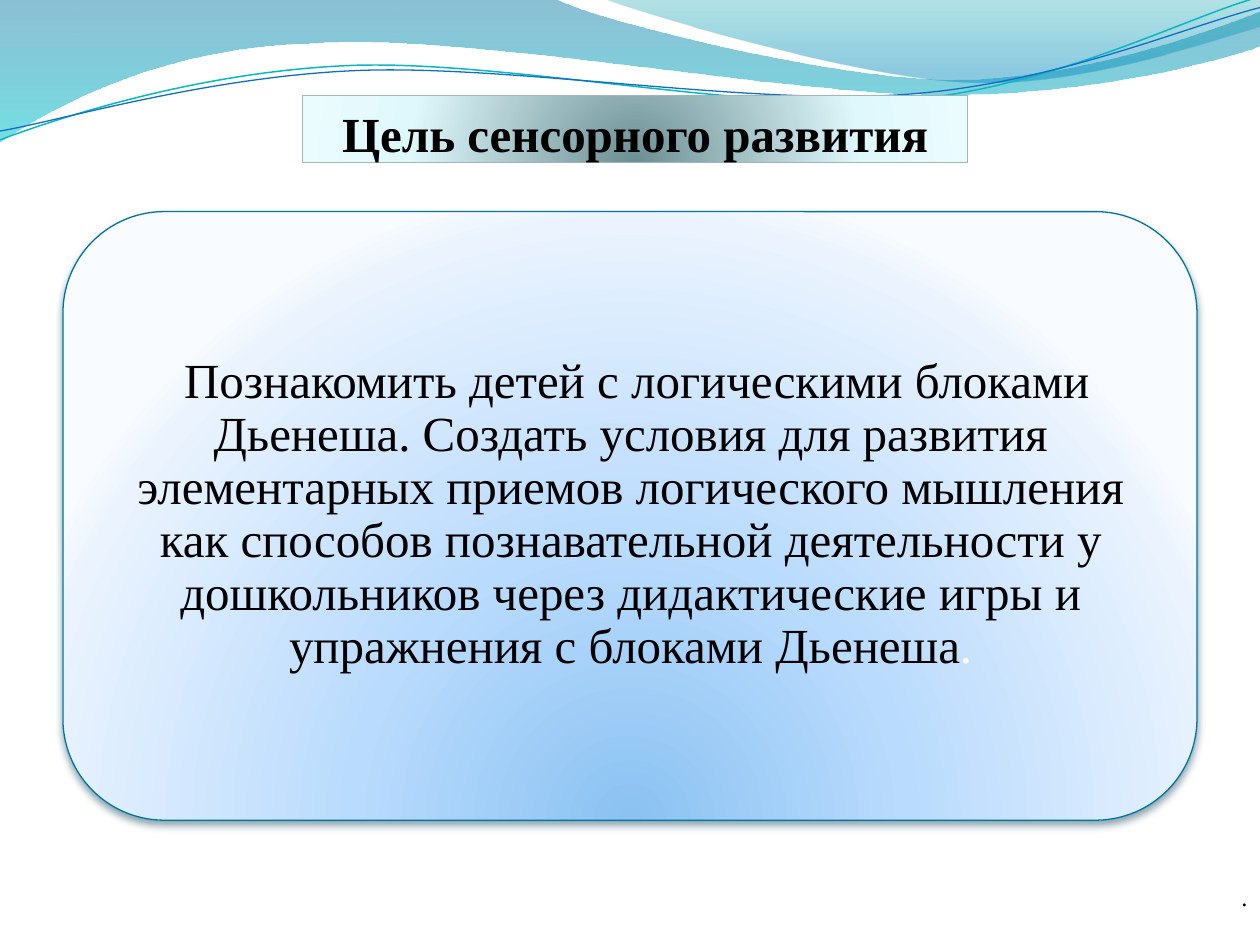
import math

from lxml import etree
from pptx import Presentation
from pptx import util as u
from pptx.dml.color import RGBColor
from pptx.enum import shapes, text
from pptx.oxml import ns

FONT = "Times New Roman"
COLORS = {
    "ink": "000000", "white": "FFFFFF",
    "wave_blue": "0074A1", "wave_cyan": "00C6CF",
    "crest_teal": "00A1A9", "crest_blue": "008BBF",
    "line_teal": "0AB8BF", "line_blue": "0F6FC6",
    "title_dark": "6C8F94", "title_mid": "DFF8FC", "title_light": "EBFCFF",
    "title_line": "A2B5B9",
    "panel_core": "8BC2F1", "panel_mid": "B9DBFD",
    "panel_pale": "EAF3FE", "panel_edge": "F8FBFF",
    "panel_line": "0074A1", "panel_shadow": "00374C",
}
TITLE_STOPS = [(0, "title_dark", 100), (68, "title_mid", 100), (100, "title_light", 100)]
PANEL_STOPS = [(0, "panel_core", 100), (43, "panel_mid", 100),
               (93, "panel_pale", 100), (100, "panel_edge", 100)]
WAVE_STOPS = [(0, "wave_blue", 45), (100, "wave_cyan", 55)]
CREST_STOPS = [(0, "crest_teal", 30), (80, "crest_blue", 45)]

WAVE = [(0, 0), (4.4, -0.01), (4.76, 0.17, 6.64, 0.63, 7.58, 0.63),
        (8.53, 0.63, 9.58, 0.26, 10, 0.09), (10.01, 0.36),
        (9.83, 0.44, 8.7, 0.76, 7.46, 0.75), (6.22, 0.75, 3.82, 0.28, 2.57, 0.34),
        (1.29, 0.36, 0.46, 0.83, -0.01, 1.13), (0, 0)]
CREST = [(4.79, -0.01), (5.09, 0.11, 6.82, 0.62, 7.69, 0.65),
         (8.56, 0.69, 9.61, 0.32, 10, 0.21), (10, 0), (4.79, -0.01)]
TEAL_LINE = [(0, 1.11), (0.48, 0.93, 1.58, 0.57, 2.77, 0.52),
             (3.95, 0.47, 5.93, 0.89, 7.13, 0.8), (8.33, 0.71, 9.38, 0.15, 9.98, -0.02)]
BLUE_LINE = [(0, 1.04), (0.47, 0.96, 1.64, 0.61, 2.83, 0.56),
             (4.03, 0.51, 5.97, 0.84, 7.17, 0.75), (8.36, 0.67, 9.41, 0.21, 10, 0.06)]
RIPPLE_TILT = -2.7

TITLE = "Цель сенсорного развития"
GOAL = (" Познакомить детей с логическими блоками Дьенеша. Создать условия для развития "
        "элементарных приемов логического мышления как способов познавательной "
        "деятельности у дошкольников через дидактические игры и упражнения с блоками Дьенеша")


def add_node(parent, tag, **attributes):
    return etree.SubElement(parent, ns.qn(tag), {k: str(v) for k, v in attributes.items()})


def add_color(parent, color, alpha):
    node = add_node(parent, "a:srgbClr", val=COLORS[color])
    if alpha < 100:
        add_node(node, "a:alpha", val=alpha * 1000)


def fill_gradient(shape, stops, radial=False):
    shape.fill.gradient()
    gradient = shape.element.spPr.find(ns.qn("a:gradFill"))
    for child in list(gradient):
        gradient.remove(child)
    stop_list = add_node(gradient, "a:gsLst")
    for position, color, alpha in stops:
        add_color(add_node(stop_list, "a:gs", pos=position * 1000), color, alpha)
    if radial:
        focus = add_node(gradient, "a:path", path="circle")
        add_node(focus, "a:fillToRect", l=50000, t=130000, r=50000, b=-30000)
    else:
        add_node(gradient, "a:lin", ang=5400000, scaled=1)


def set_line(shape, color, width):
    shape.line.color.rgb = RGBColor.from_string(COLORS[color])
    shape.line.width = u.Pt(width)


def add_shadow(shape, color):
    effects = shape.element.spPr.find(ns.qn("a:effectLst"))
    shadow = add_node(effects, "a:outerShdw", blurRad=u.Pt(4.5), dist=u.Pt(3),
                      dir=5400000, rotWithShape=0)
    add_color(shadow, color, 48)


def turn(point, center, degrees):
    cos, sin = math.cos(math.radians(degrees)), math.sin(math.radians(degrees))
    dx, dy = point[0] - center[0], point[1] - center[1]
    return center[0] + dx * cos - dy * sin, center[1] + dx * sin + dy * cos


def add_outline(slide, left, top, outline, close, tilt=0, center=(0, 0)):
    points = [turn(step[i:i + 2], center, -tilt)
              for step in outline for i in range(0, len(step), 2)]
    points = [(left + u.Inches(x), top + u.Inches(y)) for x, y in points]
    builder = slide.shapes.build_freeform(*points[0])
    builder.add_line_segments(points[1:], close=close)
    shape = builder.convert_to_shape()
    segments = iter(list(shape.element.iter(ns.qn("a:lnTo"))))
    for step in outline[1:]:
        segment = next(segments)
        if len(step) == 6:
            curve = etree.Element(ns.qn("a:cubicBezTo"))
            segment.addprevious(curve)
            for part in (segment, next(segments), next(segments)):
                curve.append(part[0])
                part.getparent().remove(part)
    shape.rotation = tilt
    shape.shadow.inherit = False
    return shape


def add_waves(slide, left, top):
    for outline, stops in ((WAVE, WAVE_STOPS), (CREST, CREST_STOPS)):
        wave = add_outline(slide, left, top, outline, True)
        fill_gradient(wave, stops)
        wave.line.fill.background()
    for outline, color, width, center in ((TEAL_LINE, "line_teal", 0.85, (4.99, 0.575)),
                                          (BLUE_LINE, "line_blue", 0.75, (4.995, 0.59))):
        ripple = add_outline(slide, left, top, outline, False, RIPPLE_TILT, center)
        ripple.fill.background()
        set_line(ripple, color, width)


def add_card(slide, kind, box, stops, line):
    card = slide.shapes.add_shape(kind, *box)
    card.shadow.inherit = False
    fill_gradient(card, stops, radial=True)
    set_line(card, line, 0.75)
    return card


def write(frame, wording, size, align, anchor, margins, bold=False):
    frame.word_wrap = True
    frame.vertical_anchor = anchor
    (frame.margin_left, frame.margin_top,
     frame.margin_right, frame.margin_bottom) = map(u.Inches, margins)
    paragraph = frame.paragraphs[0]
    paragraph.alignment = align
    for content, color in wording:
        run = paragraph.add_run()
        run.text = content
        run.font.name = FONT
        run.font.size = u.Pt(size)
        run.font.bold = bold
        run.font.color.rgb = RGBColor.from_string(COLORS[color])
    return paragraph


def add_title(slide, left, top, width, height):
    title = add_card(slide, shapes.MSO_SHAPE.RECTANGLE, (left, top, width, height),
                     TITLE_STOPS, "title_line")
    write(title.text_frame, [(TITLE, "ink")], 28, text.PP_ALIGN.CENTER,
          text.MSO_ANCHOR.BOTTOM, (0, 0.05, 0, 0), bold=True)


def add_goal(slide, left, top, width, height):
    panel = add_card(slide, shapes.MSO_SHAPE.ROUNDED_RECTANGLE, (left, top, width, height),
                     PANEL_STOPS, "panel_line")
    add_shadow(panel, "panel_shadow")
    goal = slide.shapes.add_textbox(left + u.Inches(0.24), top + u.Inches(0.23),
                                    width - u.Inches(0.47), height - u.Inches(0.47))
    paragraph = write(goal.text_frame, [(GOAL, "ink"), (".", "white")], 28,
                      text.PP_ALIGN.CENTER, text.MSO_ANCHOR.MIDDLE, (0.12,) * 4)
    paragraph.line_spacing = 0.9


def add_footer(slide, left, top, width, height):
    footer = slide.shapes.add_textbox(left, top, width, height)
    write(footer.text_frame, [(".", "ink")], 14, text.PP_ALIGN.RIGHT,
          text.MSO_ANCHOR.TOP, (0.1, 0.05, 0.1, 0.05))
    footer.text_frame.auto_size = text.MSO_AUTO_SIZE.SHAPE_TO_FIT_TEXT


def main():
    deck = Presentation()
    deck.slide_width, deck.slide_height = u.Inches(10), u.Inches(7.5)
    slide = deck.slides.add_slide(deck.slide_layouts[6])
    add_waves(slide, u.Inches(0), u.Inches(0))
    add_title(slide, u.Inches(2.4), u.Inches(0.76), u.Inches(5.28), u.Inches(0.53))
    add_goal(slide, u.Inches(0.5), u.Inches(1.68), u.Inches(9), u.Inches(4.83))
    add_footer(slide, u.Inches(6.8), u.Inches(6.95), u.Inches(3.2), u.Inches(0.34))
    deck.save("out.pptx")


if __name__ == "__main__":
    main()
